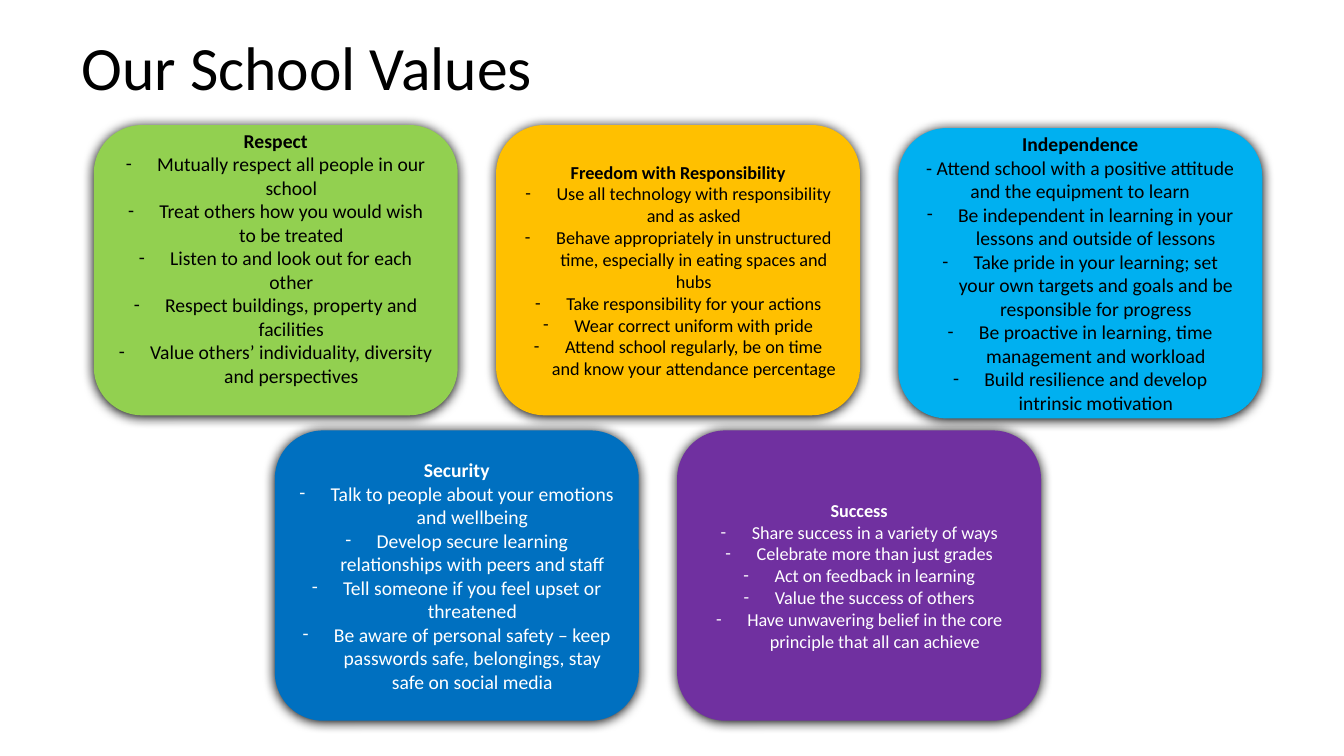
from dataclasses import dataclass

from lxml import etree
from pptx import Presentation
from pptx.dml.color import RGBColor
from pptx.enum.shapes import MSO_SHAPE
from pptx.enum.text import MSO_ANCHOR, MSO_AUTO_SIZE, PP_ALIGN
from pptx.oxml.ns import qn
from pptx.slide import Slide
from pptx.util import Inches, Pt

ROUNDED = MSO_SHAPE.ROUNDED_RECTANGLE
MIDDLE = MSO_ANCHOR.MIDDLE
NO_AUTOFIT = MSO_AUTO_SIZE.NONE
LEFT, CENTER = PP_ALIGN.LEFT, PP_ALIGN.CENTER

FONT = "Calibri"
BLACK, WHITE = "000000", "FFFFFF"

# Card grid, in inches
GRID_LEFT, GRID_TOP = 0.93, 1.24
COLUMN_STEP, ROW_STEP = 3.99, 3.03
CARD_WIDTH, CARD_HEIGHT = 3.61, 2.88
HANGING_INDENT = 0.31


@dataclass
class ValueCard:
    heading: str
    points: list[str]
    column: float
    row: float
    fill: str
    text_color: str = BLACK
    size: int = 14
    intro: str = ""
    bottom_margin: float = 0.05


CARDS = [
    ValueCard("Respect", [
        "Mutually respect all people in our school",
        "Treat others how you would wish to be treated",
        "Listen to and look out for each other",
        "Respect buildings, property and facilities",
        "Value others’ individuality, diversity and perspectives",
    ], 0, 0, "92D050", bottom_margin=0.29),
    ValueCard("Independence", [
        "Be independent in learning in your lessons and outside of lessons",
        "Take pride in your learning; set your own targets and goals and be "
        "responsible for progress",
        "Be proactive in learning, time management and workload",
        "Build resilience and develop intrinsic motivation",
    ], 2, 0.01, "00B0F0",
        intro="- Attend school with a positive attitude and the equipment to learn"),
    ValueCard("Freedom with Responsibility", [
        "Use all technology with responsibility and as asked",
        "Behave appropriately in unstructured time, especially in eating "
        "spaces and hubs",
        "Take responsibility for your actions",
        "Wear correct uniform with pride",
        "Attend school regularly, be on time and know your attendance percentage",
    ], 1, 0, "FFC000", size=13),
    ValueCard("Security", [
        "Talk to people about your emotions and wellbeing",
        "Develop secure learning relationships with peers and staff",
        "Tell someone if you feel upset or threatened",
        "Be aware of personal safety – keep passwords safe, belongings, stay "
        "safe on social media",
    ], 0.45, 1, "0070C0", WHITE),
    ValueCard("Success", [
        "Share success in a variety of ways",
        "Celebrate more than just grades",
        "Act on feedback in learning",
        "Value the success of others",
        "Have unwavering belief in the core principle that all can achieve",
    ], 1.45, 1, "7030A0", WHITE, size=13),
]


def color(value: str) -> RGBColor:
    return RGBColor.from_string(value)


def set_font(paragraph, size: int, text_color: str, bold: bool = False) -> None:
    paragraph.font.name = FONT
    paragraph.font.size = Pt(size)
    paragraph.font.bold = bold
    paragraph.font.color.rgb = color(text_color)


def add_dash(paragraph) -> None:
    properties = paragraph._p.get_or_add_pPr()
    indent = Inches(HANGING_INDENT)
    properties.set("marL", str(indent))
    properties.set("indent", str(-indent))
    etree.SubElement(properties, qn("a:buFont"), typeface=FONT)
    etree.SubElement(properties, qn("a:buChar"), char="-")


def add_shadow(shape) -> None:
    shape.shadow.inherit = False
    effects = shape.element.spPr.find(qn("a:effectLst"))
    shadow = etree.SubElement(
        effects, qn("a:outerShdw"), blurRad=str(Pt(8.5)), dist=str(Pt(1)),
        dir=str(90 * 60000), algn="ctr", rotWithShape="0")
    etree.SubElement(shadow, qn("a:srgbClr"), val=BLACK)


def add_title(slide: Slide, text: str) -> None:
    title = slide.shapes.title
    title.left, title.top = Inches(0.71), Inches(0.26)
    title.width, title.height = Inches(10.6), Inches(0.87)
    frame = title.text_frame
    frame.text = text
    frame.auto_size = NO_AUTOFIT
    frame.vertical_anchor = MIDDLE
    paragraph = frame.paragraphs[0]
    paragraph.alignment = LEFT
    paragraph.line_spacing = 0.9
    set_font(paragraph, 44, BLACK)


def add_card(slide: Slide, card: ValueCard) -> None:
    shape = slide.shapes.add_shape(
        ROUNDED,
        Inches(GRID_LEFT + card.column * COLUMN_STEP),
        Inches(GRID_TOP + card.row * ROW_STEP),
        Inches(CARD_WIDTH), Inches(CARD_HEIGHT))
    shape.fill.solid()
    shape.fill.fore_color.rgb = color(card.fill)
    shape.line.fill.background()
    add_shadow(shape)

    frame = shape.text_frame
    frame.word_wrap = True
    frame.vertical_anchor = MIDDLE
    frame.margin_bottom = Inches(card.bottom_margin)
    heading = frame.paragraphs[0]
    heading.text = card.heading
    heading.alignment = CENTER
    set_font(heading, card.size, card.text_color, bold=True)

    body = [card.intro] if card.intro else []
    for text in body + card.points:
        paragraph = frame.add_paragraph()
        paragraph.text = text
        paragraph.alignment = CENTER
        if text != card.intro:
            add_dash(paragraph)
        set_font(paragraph, card.size, card.text_color)


def main() -> None:
    presentation = Presentation()
    presentation.slide_width = Inches(13.33)
    presentation.slide_height = Inches(7.5)
    title_only = presentation.slide_layouts[5]
    slide = presentation.slides.add_slide(title_only)
    add_title(slide, "Our School Values")
    for card in CARDS:
        add_card(slide, card)
    presentation.save("out.pptx")


if __name__ == "__main__":
    main()
